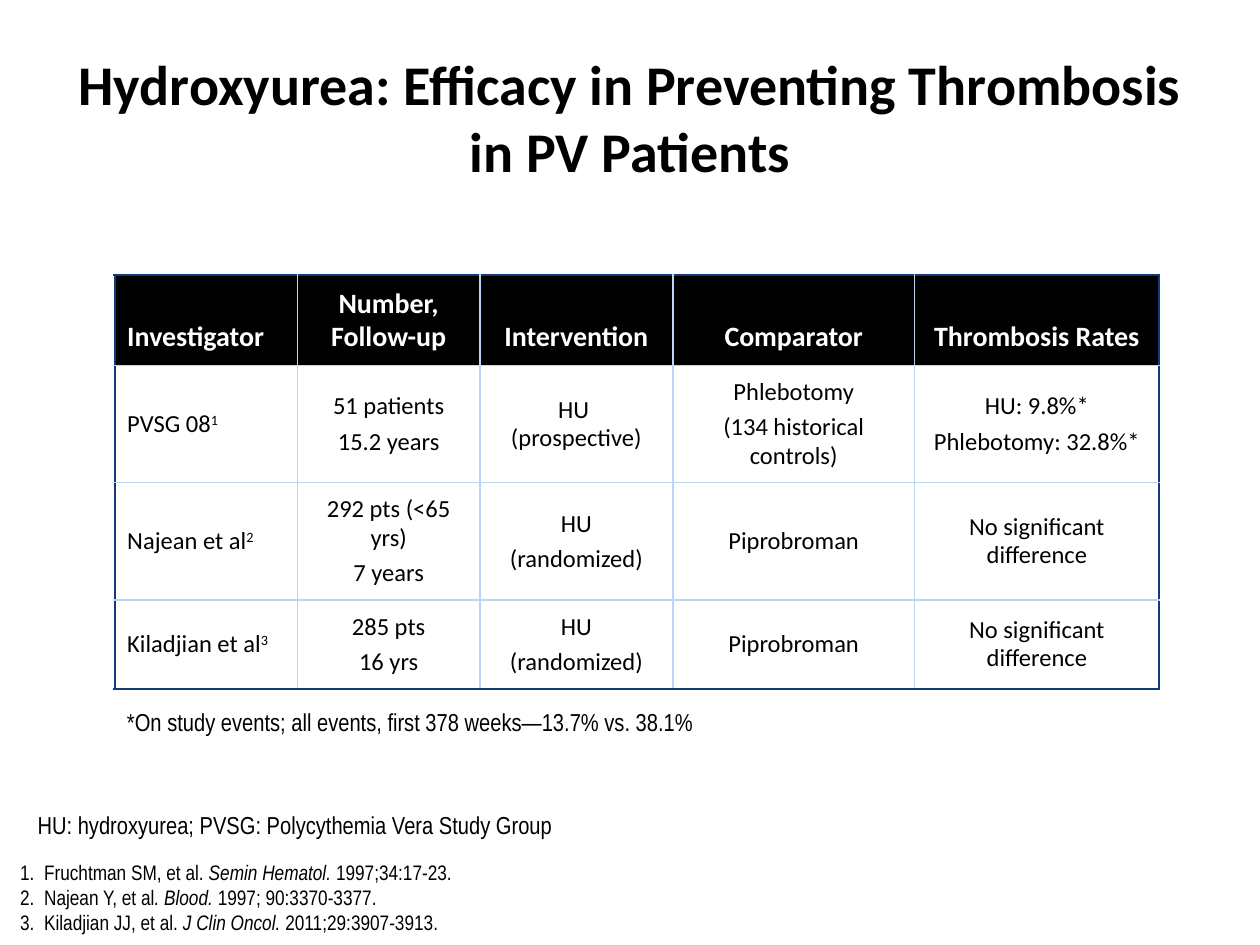
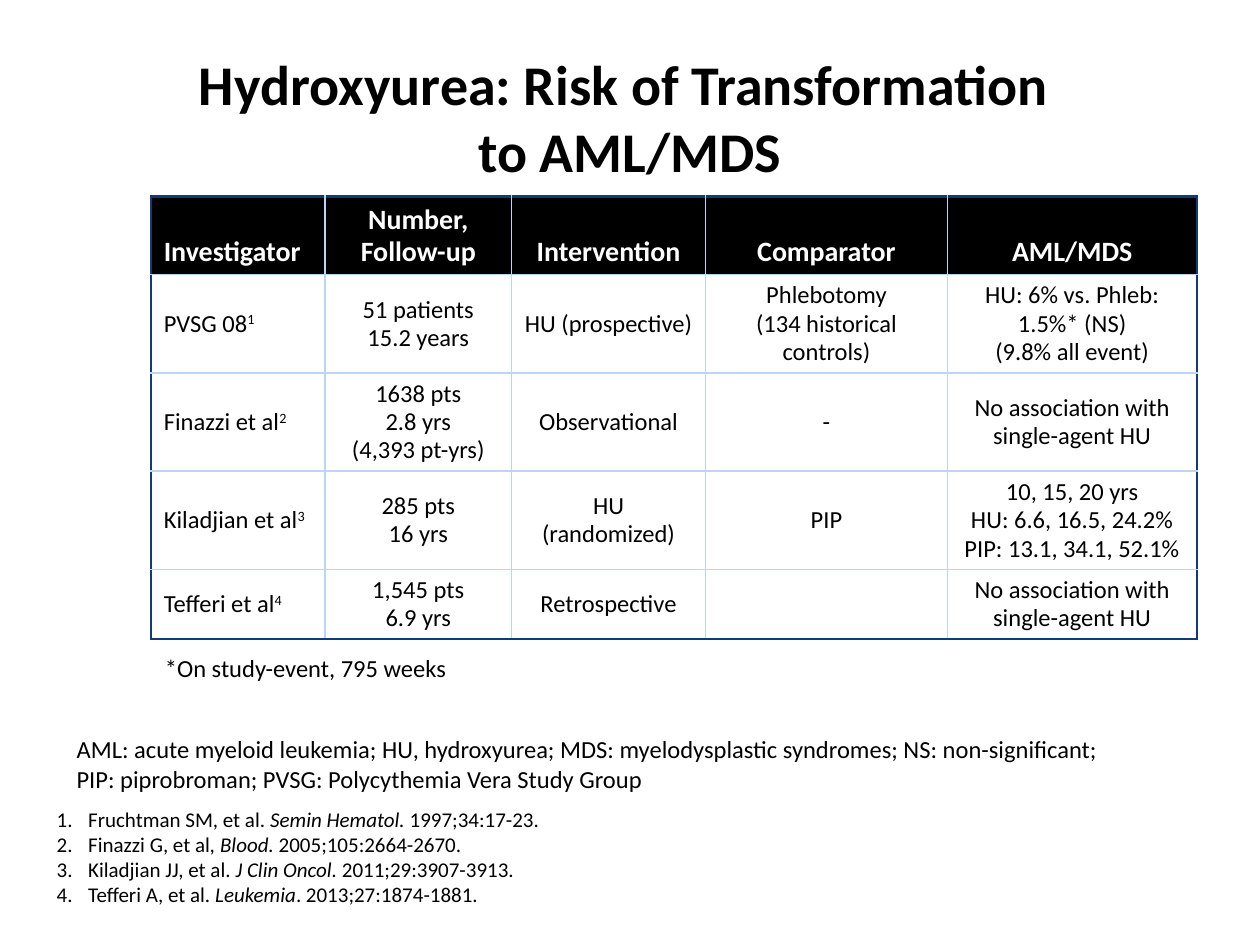
from dataclasses import dataclass

from lxml import etree
from pptx import Presentation
from pptx.dml import color
from pptx.enum import text
from pptx.oxml import ns
from pptx.util import Inches, Pt

COLORS = {
    "ink": "000000",
    "paper": "FFFFFF",
    "frame": "0F3B79",
    "grid": "BCD5F7",
}
HEADING_FONT = "Calibri"
SIZES = {"title": 32, "header": 16, "cell": 14, "note": 14, "reference": 12}


@dataclass(frozen=True)
class Box:
    left: float
    top: float
    width: float
    height: float

    def lengths(self) -> tuple:
        return tuple(Inches(v) for v in (self.left, self.top, self.width, self.height))


@dataclass(frozen=True)
class Note:
    box: Box
    wording: str


@dataclass(frozen=True)
class Reference:
    authors: str
    journal: str
    issue: str


@dataclass(frozen=True)
class StudyTable:
    box: Box
    columns: list
    row_heights: list
    rows: list
    margin: float
    space_after: float


@dataclass(frozen=True)
class StudySlide:
    title: str
    studies: StudyTable
    note_font: str
    notes: list
    references: list
    references_box: Box
    indent: float


TITLE_BOX = Box(0.5, 0.3, 9, 1.25)
FRUCHTMAN = Reference("Fruchtman SM, et al. ", "Semin Hematol. ", "1997;34:17-23.")
KILADJIAN = Reference("Kiladjian JJ, et al.", " J Clin Oncol. ", "2011;29:3907-3913.")
SHARED_HEADERS = ["Intervention", "Comparator"]

SLIDES = [
    StudySlide(
        title="Hydroxyurea: Efficacy in Preventing Thrombosis in PV Patients",
        studies=StudyTable(
            box=Box(0.91, 2.18, 8.29, 3.28),
            columns=[1.45, 1.45, 1.53, 1.92, 1.94],
            row_heights=[0.72, 0.93, 0.93, 0.7],
            rows=[
                ["Investigator", "Number,\vFollow-up", *SHARED_HEADERS, "Thrombosis Rates"],
                ["PVSG 08", "51 patients\n15.2 years", "HU \v(prospective)",
                 "Phlebotomy\n(134 historical controls)", "HU: 9.8%*\nPhlebotomy: 32.8%*"],
                ["Najean et al", "292 pts (<65 yrs)\n7 years", "HU\n(randomized)",
                 "Piprobroman", "No significant difference"],
                ["Kiladjian et al", "285 pts\n16 yrs", "HU\n(randomized)",
                 "Piprobroman", "No significant difference"],
            ],
            margin=0.1,
            space_after=4,
        ),
        note_font="Arial Narrow",
        notes=[
            Note(Box(0.2, 6.38, 8.38, 0.34),
                 "HU: hydroxyurea; PVSG: Polycythemia Vera Study Group"),
            Note(Box(0.91, 5.56, 5, 0.34),
                 "*On study events; all events, first 378 weeks—13.7% vs. 38.1%"),
        ],
        references=[
            FRUCHTMAN,
            Reference("Najean Y, et al", ". Blood. ", "1997; 90:3370-3377."),
            KILADJIAN,
        ],
        references_box=Box(0.06, 6.77, 3.77, 0.71),
        indent=0.19,
    ),
    StudySlide(
        title="Hydroxyurea: Risk of Transformation \vto AML/MDS",
        studies=StudyTable(
            box=Box(1.2, 1.56, 8.3, 3.51),
            columns=[1.38, 1.48, 1.54, 1.92, 1.98],
            row_heights=[0.62, 0.78, 0.78, 0.78, 0.55],
            rows=[
                ["Investigator", "Number,\nFollow-up", *SHARED_HEADERS, "AML/MDS"],
                ["PVSG 08", "51 patients\n15.2 years", "HU (prospective)",
                 "Phlebotomy\n(134 historical controls)",
                 "HU: 6% vs. Phleb: 1.5%* (NS)\n(9.8% all event)"],
                ["Finazzi et al", "1638 pts\n2.8 yrs\n(4,393 pt-yrs)", "Observational",
                 "-", "No association with single-agent HU"],
                ["Kiladjian et al", "285 pts\n16 yrs", "HU\n(randomized)", "PIP",
                 "10, 15, 20 yrs\nHU: 6.6, 16.5, 24.2%\nPIP: 13.1, 34.1, 52.1%"],
                ["Tefferi et al", "1,545 pts\n6.9 yrs", "Retrospective",
                 "", "No association with single-agent HU"],
            ],
            margin=0.05,
            space_after=0,
        ),
        note_font="Calibri",
        notes=[
            Note(Box(0.51, 5.78, 8.36, 0.57),
                 "AML: acute myeloid leukemia; HU, hydroxyurea; MDS: myelodysplastic syndromes; "
                 "NS: non-significant; \vPIP: piprobroman; PVSG: Polycythemia Vera Study Group"),
            Note(Box(1.21, 5.13, 2.92, 0.34), "*On study-event, 795 weeks"),
        ],
        references=[
            FRUCHTMAN,
            Reference("Finazzi G, et al", ", Blood. ", "2005;105:2664-2670."),
            KILADJIAN,
            Reference("Tefferi A, et al. ", "Leukemia", ". 2013;27:1874-1881."),
        ],
        references_box=Box(0.35, 6.35, 7.34, 0.91),
        indent=0.25,
    ),
]


def rgb(name: str) -> color.RGBColor:
    return color.RGBColor.from_string(COLORS[name])


def format_runs(frame, font: str, size: float, ink: str = "ink", bold: bool = False) -> None:
    for paragraph in frame.paragraphs:
        for run in paragraph.runs:
            run.font.name = font
            run.font.size = Pt(size)
            run.font.bold = bold
            run.font.color.rgb = rgb(ink)


def place(shape, box: Box) -> None:
    shape.left, shape.top, shape.width, shape.height = box.lengths()


def draw_title(slide, wording: str) -> None:
    title = slide.shapes.title
    place(title, TITLE_BOX)
    frame = title.text_frame
    frame.text = wording
    frame.auto_size = text.MSO_AUTO_SIZE.NONE
    frame.vertical_anchor = text.MSO_ANCHOR.MIDDLE
    frame.paragraphs[0].alignment = text.PP_ALIGN.CENTER
    format_runs(frame, HEADING_FONT, SIZES["title"], bold=True)


def set_borders(cell, outer_sides: set) -> None:
    """Draw the frame colour on outer sides and the grid colour on the rest."""
    properties = cell._tc.get_or_add_tcPr()
    for position, side in enumerate("LRTB"):
        name, width = ("frame", 1.5) if side in outer_sides else ("grid", 1)
        line = etree.Element(ns.qn(f"a:ln{side}"), w=str(Pt(width)))
        fill = etree.SubElement(line, ns.qn("a:solidFill"))
        etree.SubElement(fill, ns.qn("a:srgbClr"), val=COLORS[name])
        properties.insert(position, line)


def draw_studies(slide, studies: StudyTable) -> None:
    last_row, last_column = len(studies.rows) - 1, len(studies.columns) - 1
    table = slide.shapes.add_table(last_row + 1, last_column + 1, *studies.box.lengths()).table
    table.horz_banding = False
    for column, width in zip(table.columns, studies.columns):
        column.width = Inches(width)
    for row, height in zip(table.rows, studies.row_heights):
        row.height = Inches(height)

    for r, row in enumerate(studies.rows):
        for c, wording in enumerate(row):
            cell = table.cell(r, c)
            is_header = r == 0
            cell.fill.solid()
            cell.fill.fore_color.rgb = rgb("ink" if is_header else "paper")
            edges = {"L": c == 0, "R": c == last_column, "T": is_header, "B": r == last_row}
            set_borders(cell, {side for side, outer in edges.items() if outer})
            cell.margin_left = cell.margin_right = Inches(0.1)
            cell.margin_top = cell.margin_bottom = Inches(studies.margin)
            cell.vertical_anchor = text.MSO_ANCHOR.BOTTOM if is_header else text.MSO_ANCHOR.MIDDLE

            frame = cell.text_frame
            frame.text = wording
            is_investigator = c == 0 and not is_header
            if is_investigator:
                frame.paragraphs[0].add_run().text = str(r)
            for paragraph in frame.paragraphs:
                paragraph.alignment = text.PP_ALIGN.CENTER if c else text.PP_ALIGN.LEFT
                paragraph.line_spacing = 0.95
                paragraph.space_after = Pt(studies.space_after)
            format_runs(frame, HEADING_FONT, SIZES["header" if is_header else "cell"],
                        "paper" if is_header else "ink", is_header)
            if is_investigator:
                citation = frame.paragraphs[0].runs[-1]
                citation.font._element.set("baseline", "30000")


def draw_note(slide, note: Note, font: str) -> None:
    frame = slide.shapes.add_textbox(*note.box.lengths()).text_frame
    frame.word_wrap = True
    frame.text = note.wording
    format_runs(frame, font, SIZES["note"])


def draw_references(slide, content: StudySlide) -> None:
    body = slide.placeholders[1]
    place(body, content.references_box)
    frame = body.text_frame
    frame.auto_size = text.MSO_AUTO_SIZE.NONE
    frame.vertical_anchor = text.MSO_ANCHOR.TOP
    for i, reference in enumerate(content.references):
        paragraph = frame.add_paragraph() if i else frame.paragraphs[0]
        paragraph.text = reference.authors
        journal = paragraph.add_run()
        journal.text = reference.journal
        journal.font.italic = True
        paragraph.add_run().text = reference.issue
        paragraph.space_before = Pt(0)
        properties = paragraph._p.get_or_add_pPr()
        properties.set("marL", str(Inches(content.indent)))
        properties.set("indent", str(-Inches(content.indent)))
        etree.SubElement(properties, ns.qn("a:buFont"), typeface="+mj-lt")
        etree.SubElement(properties, ns.qn("a:buAutoNum"), type="arabicPeriod")
    format_runs(frame, content.note_font, SIZES["reference"])


def main() -> None:
    deck = Presentation()
    deck.slide_width, deck.slide_height = Inches(10), Inches(7.5)
    title_and_content = deck.slide_layouts[1]
    for content in SLIDES:
        slide = deck.slides.add_slide(title_and_content)
        draw_title(slide, content.title)
        draw_studies(slide, content.studies)
        draw_references(slide, content)
        for note in content.notes:
            draw_note(slide, note, content.note_font)
    deck.save("out.pptx")


if __name__ == "__main__":
    main()
